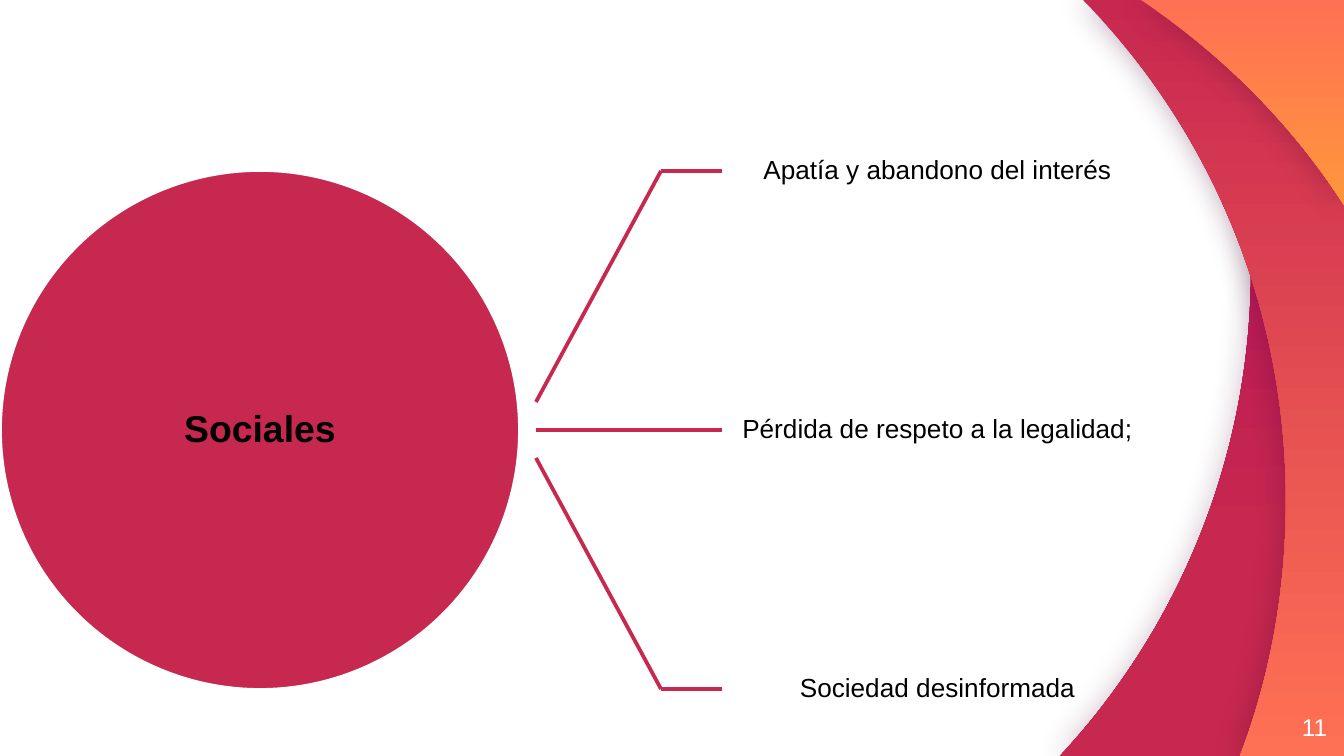
"""Build a slide that fans one social cause out into three effects."""
import dataclasses

import lxml.etree
import pptx
import pptx.dml.color
import pptx.enum.shapes
import pptx.enum.text
import pptx.oxml.ns
import pptx.util

EMU_PER_PX = 914400 / 134.4
WIDTH, HEIGHT = 1344, 756
ALIGN = pptx.enum.text.PP_ALIGN
LINE = pptx.enum.shapes.MSO_CONNECTOR.STRAIGHT


@dataclasses.dataclass(frozen=True)
class Theme:
    """Hold the colours and type sizes of the slide."""

    font: str = "Arial"
    ink: str = "000000"
    paper: str = "FFFFFF"
    plum: str = "AC0C5C"
    crimson: str = "C7284F"
    coral: str = "FF7154"
    amber: str = "FF963C"
    shadow: str = "410433"
    title_size: int = 20
    effect_size: int = 14
    number_size: int = 13
    line_width: int = 2


THEME = Theme()


def emu(length):
    """Turn px into EMU."""
    return pptx.util.Emu(round(length * EMU_PER_PX))


def rgb(value):
    """Turn a hex string into a colour."""
    return pptx.dml.color.RGBColor.from_string(value)


def apply_format(target, values):
    """Set each named attribute on the target."""
    for name, value in values.items():
        setattr(target, name, value)


def add_child(parent, tag, **attributes):
    """Append a drawing element and return it."""
    return lxml.etree.SubElement(parent, pptx.oxml.ns.qn(tag), attributes)


def style_line(line, color):
    """Give an outline its colour and width."""
    line.color.rgb = rgb(color)
    line.width = pptx.util.Pt(THEME.line_width)


def add_text(slide, box, text, size, color=THEME.ink, bold=False, align=ALIGN.CENTER, spacing=0.9, inset=0):
    """Add a text box with one vertically centred paragraph."""
    shape = slide.shapes.add_textbox(*map(emu, box))
    frame = shape.text_frame
    margins = {f"margin_{side}": emu(inset) for side in ("left", "top", "right", "bottom")}
    apply_format(frame, {
        "word_wrap": True,
        "vertical_anchor": pptx.enum.text.MSO_ANCHOR.MIDDLE,
        **margins,
    })
    paragraph = frame.paragraphs[0]
    apply_format(paragraph, {"text": text, "alignment": align, "line_spacing": spacing})
    font = paragraph.runs[0].font
    apply_format(font, {"name": THEME.font, "size": pptx.util.Pt(size), "bold": bold})
    font.color.rgb = rgb(color)
    return shape


def add_line(slide, start, end):
    """Add a crimson straight connector."""
    connector = slide.shapes.add_connector(LINE, *map(emu, (*start, *end)))
    style_line(connector.line, THEME.crimson)
    add_child(connector._element.spPr, "a:effectLst")
    return connector


def bend_segments(shape, curve_count):
    """Merge the leading triples of straight segments into cubic curves."""
    segments = list(shape._element.iter(pptx.oxml.ns.qn("a:lnTo")))
    for index in range(0, 3 * curve_count, 3):
        triple = segments[index:index + 3]
        curve = lxml.etree.Element(pptx.oxml.ns.qn("a:cubicBezTo"))
        triple[0].addprevious(curve)
        for segment in triple:
            curve.append(segment[0])
            segment.getparent().remove(segment)


def add_soft_shadow(shape, opacity):
    """Add a blurred centred shadow to a shape."""
    shape.shadow.inherit = False
    effects = shape._element.spPr.find(pptx.oxml.ns.qn("a:effectLst"))
    blur = str(pptx.util.Pt(16.9))
    shadow = add_child(effects, "a:outerShdw", blurRad=blur, dist="0", dir="0", algn="ctr", rotWithShape="0")
    color = add_child(shadow, "a:srgbClr", val=THEME.shadow)
    add_child(color, "a:alpha", val=str(opacity * 1000))


def add_wave(slide, start, curves, corners, colors, opacity, last_stop=1.0):
    """Add a curved edge shape with a downward gradient."""
    points = [point for curve in curves for point in curve] + corners
    builder = slide.shapes.build_freeform(*map(emu, start))
    builder.add_line_segments([tuple(map(emu, point)) for point in points], close=True)
    shape = builder.convert_to_shape()
    bend_segments(shape, len(curves))
    shape.line.fill.background()
    shape.fill.gradient()
    shape.fill.gradient_angle = 270
    for stop, color, position in zip(shape.fill.gradient_stops, colors, (0, last_stop)):
        stop.color.rgb = rgb(color)
        stop.position = position
    add_soft_shadow(shape, opacity)


def add_waves(slide):
    """Add the three layered waves on the right edge."""
    top, bottom = (WIDTH, 0), (WIDTH, HEIGHT)
    add_wave(slide, (1199, 0),
             [((1234, 86), (1251, 176), (1251, 269)), ((1251, 457), (1179, 628), (1060, HEIGHT))],
             [bottom, top], (THEME.plum, THEME.crimson), 25, 0.72)
    add_wave(slide, (1083, 0),
             [((1210, 129), (1286, 306), (1286, 501)), ((1286, 589), (1271, 675), (1240, HEIGHT))],
             [bottom, top], (THEME.crimson, THEME.coral), 35)
    add_wave(slide, (1141, 0), [((1222, 54), (1292, 124), (WIDTH, 205))],
             [top], (THEME.coral, THEME.amber), 30)


def centered_square(center, side):
    """Return the box of a square around a centre."""
    return (*(value - side // 2 for value in center), side, side)


def add_cause(slide, center, text):
    """Add the large circle and the name of the cause."""
    oval = pptx.enum.shapes.MSO_SHAPE.OVAL
    shape = slide.shapes.add_shape(oval, *map(emu, centered_square(center, 520)))
    shape.shadow.inherit = False
    shape.fill.solid()
    shape.fill.fore_color.rgb = rgb(THEME.crimson)
    style_line(shape.line, THEME.paper)
    add_text(slide, centered_square(center, 368), text, THEME.title_size, bold=True)


def add_effect(slide, middle, row, text):
    """Add one effect with its bent lead line."""
    height = 260
    y = middle + 259 * row
    bend = (661, y)
    add_line(slide, (536, middle + 28 * row), bend)
    lead = add_line(slide, bend, (722, y))
    label = add_text(slide, (722, y - height // 2, 431, height), text, THEME.effect_size, inset=15)
    lead.end_connect(label, 1)


def main():
    """Build and save the slide."""
    presentation = pptx.Presentation()
    apply_format(presentation, {"slide_width": emu(WIDTH), "slide_height": emu(HEIGHT)})
    slide = presentation.slides.add_slide(presentation.slide_layouts[6])
    add_waves(slide)
    add_text(slide, (1246, 698, 81, 58), "11", THEME.number_size,
             color=THEME.paper, align=ALIGN.RIGHT, spacing=1.0)
    middle = 430
    add_cause(slide, (260, middle), "Sociales")
    effects = ("Apatía y abandono del interés", "Pérdida de respeto a la legalidad;", "Sociedad desinformada")
    for row, text in enumerate(effects, start=-1):
        add_effect(slide, middle, row, text)
    presentation.save("out.pptx")


if __name__ == "__main__":
    main()
